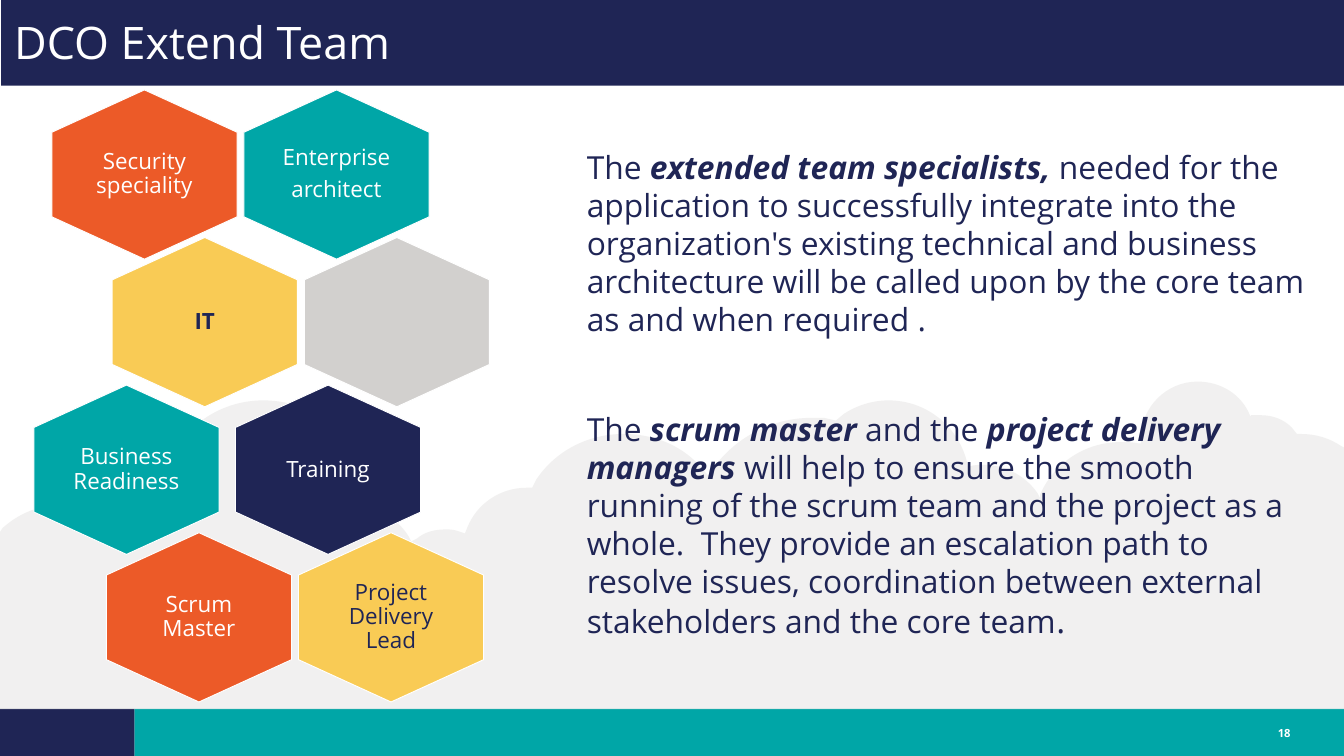
"""Build the extended team slide: a honeycomb of roles beside two explanatory paragraphs."""
from dataclasses import dataclass
from typing import Any, Optional

from lxml import etree
from pptx import Presentation
from pptx.dml.color import RGBColor
from pptx.enum.shapes import MSO_SHAPE
from pptx.enum.text import MSO_ANCHOR, PP_ALIGN
from pptx.oxml.ns import qn
from pptx.util import Cm, Pt

RECTANGLE, HEXAGON = MSO_SHAPE.RECTANGLE, MSO_SHAPE.HEXAGON
TOP, MIDDLE, BOTTOM = MSO_ANCHOR.TOP, MSO_ANCHOR.MIDDLE, MSO_ANCHOR.BOTTOM
LEFT, CENTER, RIGHT = PP_ALIGN.LEFT, PP_ALIGN.CENTER, PP_ALIGN.RIGHT
FONT = "Open Sans"
INCH = 2.54
COLORS = {
    "navy": "1F2555",
    "teal": "00A6A7",
    "orange": "EC5A28",
    "yellow": "F9CB55",
    "grey": "D2D0CE",
    "white": "FFFFFF",
}
HEX_WIDTH, HEX_HEIGHT = 3.2, 3.5
LABEL_WIDTH, LABEL_HEIGHT = 2.34, 2.13
FIRST_ROW, ROW_PITCH = 3.3, 2.79

CLOUD_START = (8.91, 2.84)
CLOUD_SEGMENTS = [
    (9.09, 2.84, 9.24, 2.94, 9.3, 3.09), (9.3, 3.1), (9.31, 3.09),
    (9.33, 3.09, 9.36, 3.09, 9.38, 3.09), (9.47, 3.09, 9.55, 3.12, 9.61, 3.18),
    (9.65, 3.23), (9.68, 3.23), (9.79, 3.23, 9.89, 3.26, 9.98, 3.32),
    (10, 3.33), (10, 5.28), (0, 5.28), (0, 4.84, 0, 4.4, 0, 3.96), (0.02, 3.93),
    (0.13, 3.83, 0.28, 3.76, 0.44, 3.76), (0.52, 3.76, 0.59, 3.78, 0.66, 3.81),
    (0.71, 3.84), (0.75, 3.79), (0.86, 3.68, 1.01, 3.62, 1.17, 3.62),
    (1.19, 3.62), (1.19, 3.61), (1.27, 3.25, 1.58, 2.98, 1.96, 2.98),
    (2.4, 2.98, 2.75, 3.33, 2.75, 3.76), (2.75, 3.79), (2.83, 3.81),
    (2.92, 3.85, 2.99, 3.91, 3.04, 3.99), (3.06, 4.03), (3.1, 4.01),
    (3.16, 3.96, 3.23, 3.94, 3.32, 3.94), (3.34, 3.94, 3.37, 3.94, 3.4, 3.95),
    (3.46, 3.97), (3.48, 3.92), (3.55, 3.75, 3.72, 3.63, 3.92, 3.63),
    (3.96, 3.63), (3.99, 3.57), (4.13, 3.36, 4.37, 3.23, 4.64, 3.23),
    (4.86, 3.23, 5.06, 3.31, 5.2, 3.46), (5.27, 3.54), (5.29, 3.51),
    (5.45, 3.27, 5.73, 3.11, 6.04, 3.11), (6.07, 3.11, 6.1, 3.11, 6.13, 3.11),
    (6.22, 3.13), (6.28, 3.08), (6.37, 3.02, 6.49, 2.98, 6.61, 2.98),
    (6.9, 2.98, 7.14, 3.18, 7.2, 3.46), (7.2, 3.47), (7.22, 3.47),
    (7.25, 3.46, 7.28, 3.46, 7.32, 3.46), (7.48, 3.46, 7.63, 3.54, 7.72, 3.67),
    (7.74, 3.71), (7.74, 3.68), (7.84, 3.45, 8.07, 3.29, 8.34, 3.29),
    (8.39, 3.29, 8.43, 3.29, 8.47, 3.3), (8.49, 3.3), (8.49, 3.26),
    (8.49, 3.03, 8.68, 2.84, 8.91, 2.84),
]


@dataclass(frozen=True)
class Span:
    text: str
    size: float
    color: str = "navy"
    bold: bool = False
    italic: bool = False


@dataclass(frozen=True)
class Role:
    fill: str
    lines: tuple[str, ...] = ()
    color: str = "white"
    bold: bool = False


@dataclass(frozen=True)
class Row:
    center: float
    pitch: float
    roles: tuple[Role, Role]


ROWS = [
    Row(2.73, 3.63, (Role("orange", ("Security speciality",)),
                     Role("teal", ("Enterprise", "architect")))),
    Row(3.87, 3.63, (Role("yellow", ("IT",), "navy", True), Role("grey"))),
    Row(2.39, 3.81, (Role("teal", ("Business Readiness",)), Role("navy", ("Training",)))),
    Row(3.76, 3.63, (Role("orange", ("Scrum Master",)),
                     Role("yellow", ("Project Delivery Lead",), "navy"))),
]
BODY = [
    [
        Span("The ", 17),
        Span("extended team specialists, ", 17, bold=True, italic=True),
        Span("needed for the application to successfully integrate into the organization's "
             "existing technical and business architecture will be called upon by the core "
             "team as and when required .", 17),
    ],
    [
        Span("The ", 17),
        Span("scrum master ", 17, bold=True, italic=True),
        Span("and the ", 17),
        Span("project delivery managers", 17, bold=True, italic=True),
        Span(" will help to ensure the smooth running of the scrum team and the project as a "
             "whole.  They provide an escalation path to resolve issues, coordination between "
             "external stakeholders and the core team", 17),
        Span(".", 18),
    ],
]


def rgb(name: str) -> RGBColor:
    """Return the named colour."""
    return RGBColor.from_string(COLORS[name])


def apply(target: Any, values: dict[str, Any]) -> None:
    """Set every attribute in values on the target."""
    for name, value in values.items():
        setattr(target, name, value)


def write(frame: Any, paragraphs: list[list[Span]], formats: dict[str, Any]) -> None:
    """Fill a text frame with formatted spans."""
    for index, spans in enumerate(paragraphs):
        para = frame.add_paragraph() if index else frame.paragraphs[0]
        apply(para, formats)
        if not index:
            para.space_before = Pt(0)
        for span in spans:
            run = para.add_run()
            run.text = span.text
            apply(run.font, {"name": FONT, "size": Pt(span.size),
                             "bold": span.bold, "italic": span.italic})
            run.font.color.rgb = rgb(span.color)


def add_text(slide: Any, bounds: tuple[float, ...], paragraphs: list[list[Span]],
             anchor: Any, formats: dict[str, Any], indent: float = 0) -> None:
    """Add a wrapping text box without margins, save an optional left indent."""
    frame = slide.shapes.add_textbox(*map(Cm, bounds)).text_frame
    apply(frame, {"word_wrap": True, "vertical_anchor": anchor, "margin_left": Cm(indent),
                  "margin_top": 0, "margin_right": 0, "margin_bottom": 0})
    write(frame, paragraphs, formats)


def paint(shape: Any, fill: str, line: Optional[str] = None) -> None:
    """Give a shape a flat fill and an optional thin outline."""
    shape.shadow.inherit = False
    shape.fill.solid()
    shape.fill.fore_color.rgb = rgb(fill)
    if line:
        shape.line.color.rgb = rgb(line)
        shape.line.width = Pt(0.5)
    else:
        shape.line.fill.background()


def add_bar(slide: Any, bounds: tuple[float, ...], fill: str) -> Any:
    """Add a plain rectangle."""
    bar = slide.shapes.add_shape(RECTANGLE, *map(Cm, bounds))
    paint(bar, fill)
    return bar


def add_clouds(slide: Any) -> None:
    """Add the translucent cloud bank, turning its longer segments into Bezier curves."""
    builder = slide.shapes.build_freeform(*(Cm(value * INCH) for value in CLOUD_START))
    builder.add_line_segments([(Cm(x * INCH), Cm(y * INCH)) for *_, x, y in CLOUD_SEGMENTS])
    clouds = builder.convert_to_shape()
    paint(clouds, "grey")
    lines = list(clouds._element.iter(qn("a:lnTo")))
    for line, segment in zip(lines, CLOUD_SEGMENTS):
        if len(segment) == 6:
            curve = etree.Element(qn("a:cubicBezTo"))
            for x, y in zip(segment[::2], segment[1::2]):
                point = etree.SubElement(curve, qn("a:pt"))
                point.set("x", str(Cm(x * INCH) - clouds.left))
                point.set("y", str(Cm(y * INCH) - clouds.top))
            line.getparent().replace(line, curve)
    color = next(clouds._element.iter(qn("a:srgbClr")))
    etree.SubElement(color, qn("a:alpha")).set("val", "30000")


def add_role(slide: Any, role: Role, x: float, y: float) -> None:
    """Add a pointed-up hexagon centred on x, y with its label."""
    bounds = (x - HEX_WIDTH / 2, y - HEX_HEIGHT / 2, HEX_WIDTH, HEX_HEIGHT)
    hexagon = slide.shapes.add_shape(HEXAGON, *map(Cm, bounds))
    hexagon.rotation = 90
    hexagon.adjustments[0] = 0.25
    paint(hexagon, role.fill, "white")
    if role.lines:
        label = (x - LABEL_WIDTH / 2, y - LABEL_HEIGHT / 2, LABEL_WIDTH, LABEL_HEIGHT)
        spans = [[Span(line, 12, role.color, role.bold)] for line in role.lines]
        add_text(slide, label, spans, MIDDLE,
                 {"alignment": CENTER, "line_spacing": 0.9, "space_after": Pt(4.2)})


def main() -> None:
    """Build and save the deck."""
    deck = Presentation()
    apply(deck, {"slide_width": Cm(25.4), "slide_height": Cm(14.29)})
    slide = deck.slides.add_slide(deck.slide_layouts[6])
    add_bar(slide, (2.54, 13.4, 22.86, 0.89), "teal")
    add_bar(slide, (0, 13.4, 2.54, 0.89), "navy")
    add_clouds(slide)
    add_text(slide, (23.5, 13.48, 0.89, 0.51), [[Span("18", 6, "white", True)]], BOTTOM,
             {"alignment": RIGHT})
    title = add_bar(slide, (0.02, -0.03, 25.4, 1.65), "navy").text_frame
    title.vertical_anchor = MIDDLE
    write(title, [[Span("DCO Extend Team", 24, "white")]], {"alignment": LEFT})
    add_text(slide, (10.58, 2.79, 14.2, 9.8), BODY, TOP,
             {"alignment": LEFT, "space_before": Pt(38.5)}, 0.51)
    for index, row in enumerate(ROWS):
        for column, role in enumerate(row.roles):
            add_role(slide, role, row.center + column * row.pitch, FIRST_ROW + index * ROW_PITCH)
    deck.save("out.pptx")


if __name__ == "__main__":
    main()
